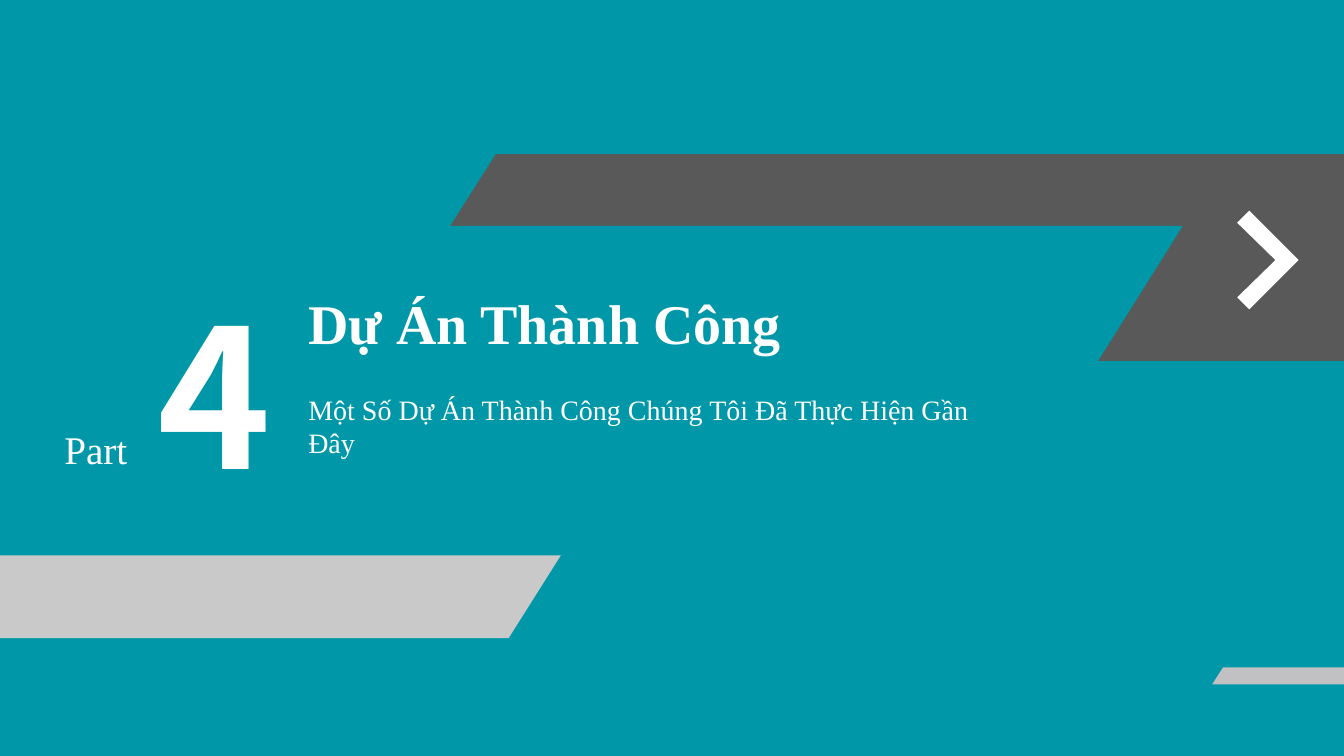
"""Build the section slide "Dự Án Thành Công" with slanted bands."""
from dataclasses import dataclass

from pptx import Presentation
from pptx.dml.color import RGBColor
from pptx.enum.text import MSO_ANCHOR, MSO_AUTO_SIZE, PP_ALIGN
from pptx.util import Pt

PX = 9144
WIDTH, HEIGHT = 1334, 750
TOP = MSO_ANCHOR.TOP
LEFT = PP_ALIGN.LEFT
GROW = MSO_AUTO_SIZE.SHAPE_TO_FIT_TEXT
TITLE_LAYOUT = 0


@dataclass(frozen=True)
class Theme:
    teal: str = "0098A8"
    dark: str = "595959"
    light: str = "C9C9C9"
    silver: str = "C1C0C3"
    white: str = "FFFFFF"
    serif: str = "Times New Roman"
    sans: str = "Noto Sans CJK SC"
    title: int = 40
    number: int = 138
    subtitle: int = 20
    label: int = 28


@dataclass(frozen=True)
class Band:
    points: tuple[tuple[int, int], ...]
    color: str


@dataclass(frozen=True)
class Label:
    text: str
    left: int
    top: int
    width: int
    height: int
    size: int
    font: str
    bold: bool = False
    wrap: bool = False


THEME = Theme()

BANDS = (
    Band(((WIDTH, 358), (362, 358), (492, 153), (WIDTH, 153)), THEME.dark),
    Band(((0, 446), (623, 446), (505, 633), (0, 633)), THEME.light),
    Band(((0, 224), (1174, 224), (969, 551), (0, 551)), THEME.teal),
    Band(((1289, 258), (1240, 307), (1228, 295), (1266, 258), (1228, 221), (1240, 209)),
         THEME.white),
    Band(((WIDTH, 662), (WIDTH, HEIGHT), (1158, HEIGHT), (1214, 662)), THEME.silver),
    Band(((WIDTH, 679), (WIDTH, HEIGHT), (1127, HEIGHT), (1171, 679)), THEME.teal),
)

TITLE = Label("Dự Án Thành Công", 296, 281, 494, 77, THEME.title, THEME.serif, bold=True)
SUBTITLE = Label("Một Số Dự Án Thành Công Chúng Tôi Đã Thực Hiện Gần Đây",
                 296, 384, 685, 77, THEME.subtitle, THEME.serif, wrap=True)
LABELS = (
    Label("4", 147, 269, 140, 242, THEME.number, THEME.sans, bold=True),
    Label("Part", 54, 417, 83, 57, THEME.label, THEME.serif),
)


def draw_band(page, band: Band) -> None:
    """Draw one filled outline."""
    start, *rest = band.points
    builder = page.shapes.build_freeform(*start, scale=float(PX))
    builder.add_line_segments(rest, close=True)
    shape = builder.convert_to_shape()
    shape.fill.solid()
    shape.fill.fore_color.rgb = RGBColor.from_string(band.color)
    shape.line.fill.background()
    shape.shadow.inherit = False


def write_label(box, label: Label) -> None:
    """Place a text shape and set its text and format."""
    box.left, box.top = label.left * PX, label.top * PX
    box.width, box.height = label.width * PX, label.height * PX
    frame = box.text_frame
    frame.text = label.text
    frame.word_wrap = label.wrap
    frame.auto_size = GROW
    frame.vertical_anchor = TOP
    para = frame.paragraphs[0]
    para.alignment = LEFT
    para.space_before = Pt(0)
    para.font.name = label.font
    para.font.size = Pt(label.size)
    para.font.bold = label.bold
    para.font.color.rgb = RGBColor.from_string(THEME.white)


def main() -> None:
    """Build and save the deck."""
    deck = Presentation()
    deck.slide_width, deck.slide_height = WIDTH * PX, HEIGHT * PX
    page = deck.slides.add_slide(deck.slide_layouts[TITLE_LAYOUT])
    page.background.fill.solid()
    page.background.fill.fore_color.rgb = RGBColor.from_string(THEME.teal)
    for band in BANDS:
        draw_band(page, band)
    for box, label in zip(tuple(page.placeholders), (TITLE, SUBTITLE)):
        page.shapes.element.append(box.element)
        write_label(box, label)
    for label in LABELS:
        write_label(page.shapes.add_textbox(0, 0, 0, 0), label)
    deck.save("out.pptx")


if __name__ == "__main__":
    main()
